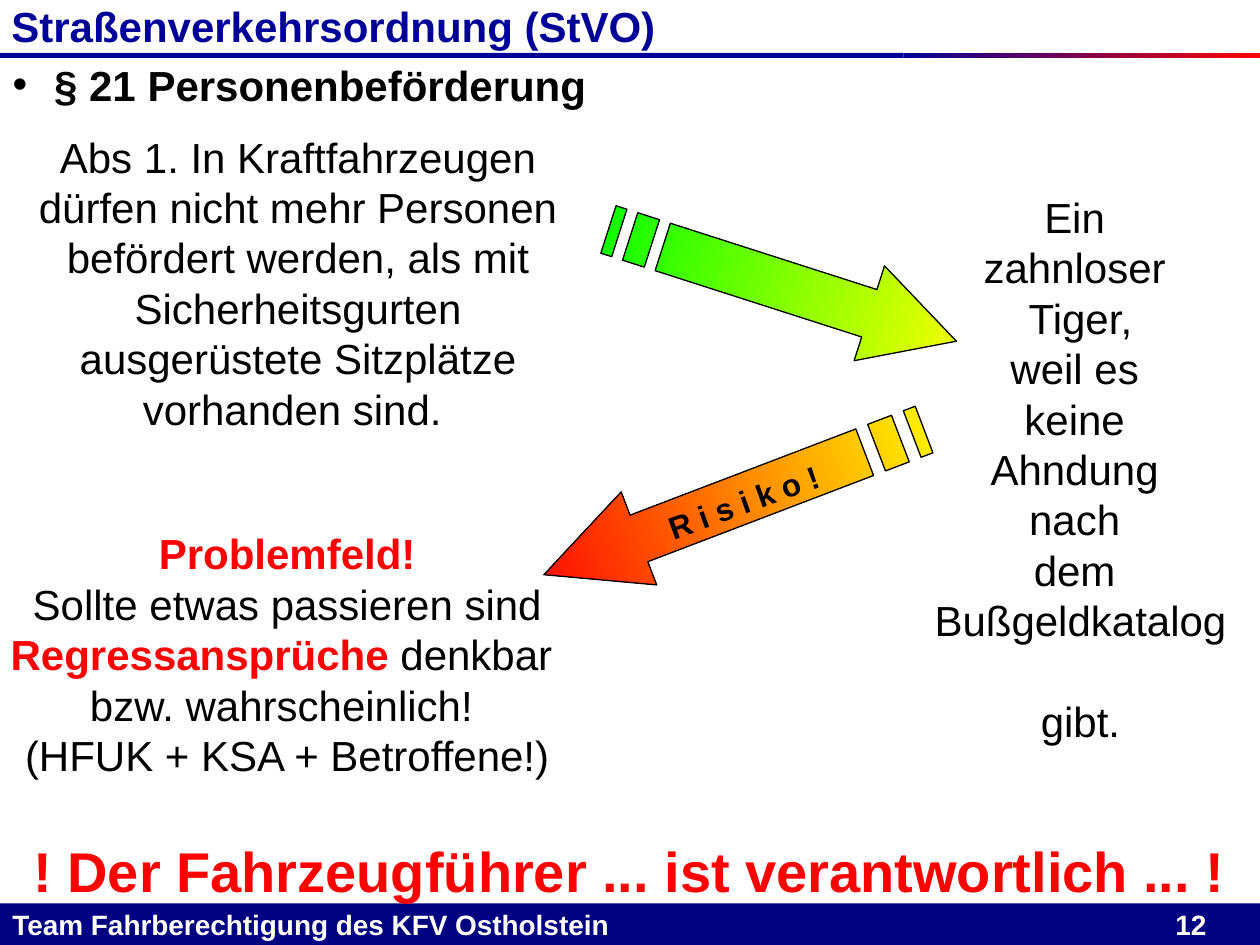
from copy import deepcopy
from typing import NamedTuple

from pptx import Presentation
from pptx.dml.color import RGBColor
from pptx.enum.shapes import MSO_SHAPE
from pptx.enum.text import MSO_ANCHOR, MSO_AUTO_SIZE, PP_ALIGN
from pptx.oxml.ns import qn
from pptx.util import Inches, Pt
from lxml.etree import SubElement

WIDE, HIGH = 10, 7.5
NAVY, DEEP, RED = "000099", "000080", "FF0000"
BLACK, WHITE = "000000", "FFFFFF"
LEFT, MID = PP_ALIGN.LEFT, PP_ALIGN.CENTER


class Box(NamedTuple):
    x: float
    y: float
    w: float
    h: float
    turn: float = 0


class Part(NamedTuple):
    text: str
    tint: str = BLACK
    bold: bool = False


class Arrow(NamedTuple):
    box: Box
    tints: tuple[str, str]


class Note(NamedTuple):
    box: Box
    rows: list[list[Part]]
    size: int = 24
    anchor: MSO_ANCHOR = MSO_ANCHOR.TOP
    wrap: bool = True


def paint(tint: str) -> RGBColor:
    return RGBColor.from_string(tint)


def place(shape, box: Box) -> None:
    shape.left, shape.top, shape.width, shape.height = map(Inches, box[:4])
    shape.rotation = box.turn


def write(frame, rows, *, size=24, align=MID, anchor=MSO_ANCHOR.TOP,
          wrap=True, inset=0.1, edge=0.05):
    """Fill a text frame: each row is a paragraph, each part a format."""
    frame.auto_size = MSO_AUTO_SIZE.NONE
    frame.word_wrap = wrap
    frame.vertical_anchor = anchor
    frame.margin_left = frame.margin_right = Inches(inset)
    frame.margin_top = frame.margin_bottom = Inches(edge)
    for i, row in enumerate(rows):
        para = frame.add_paragraph() if i else frame.paragraphs[0]
        para.alignment = align
        para.space_before = Pt(0)
        for part in row:
            for j, line in enumerate(part.text.split("\n")):
                if j:
                    para.add_line_break()
                    para._p[-1].append(deepcopy(run._r.rPr))
                run = para.add_run()
                run.text = line
                font = run.font
                font.name, font.size, font.bold = "Arial", Pt(size), part.bold
                font.color.rgb = paint(part.tint)


def blend(shape, tints: tuple[str, str]) -> None:
    shape.fill.gradient()
    shape.fill.gradient_angle = 0
    for stop, tint, spot in zip(shape.fill.gradient_stops, tints, (0, 1)):
        stop.color.rgb, stop.position = paint(tint), spot


def draw_bar(slide, box: Box, *tints: str):
    bar = slide.shapes.add_shape(MSO_SHAPE.RECTANGLE, *map(Inches, box[:4]))
    bar.shadow.inherit = False
    bar.line.fill.background()
    if len(tints) > 1:
        blend(bar, tints)
    else:
        bar.fill.solid()
        bar.fill.fore_color.rgb = paint(tints[0])
    return bar


def draw_arrow(slide, arrow: Arrow) -> None:
    # Striped arrow on a grid of 32 columns and 4 rows
    box = arrow.box
    pen = slide.shapes.build_freeform(
        5, 1, scale=(Inches(box.w) / 32, Inches(box.h) / 4))
    pen.add_line_segments([(24, 1), (24, 0), (32, 2), (24, 4), (24, 3), (5, 3)])
    for start, end in ((2, 4), (0, 1)):
        pen.move_to(start, 1)
        pen.add_line_segments([(end, 1), (end, 3), (start, 3)])
    shape = pen.convert_to_shape()
    place(shape, box)
    shape.shadow.inherit = False
    blend(shape, arrow.tints)
    shape.line.color.rgb, shape.line.width = paint(BLACK), Pt(0.75)


def draw_note(slide, note: Note) -> None:
    shape = slide.shapes.add_textbox(0, 0, 0, 0)
    place(shape, note.box)
    write(shape.text_frame, note.rows, size=note.size,
          anchor=note.anchor, wrap=note.wrap)


ARROWS = [
    Arrow(Box(4.76, 1.87, 2.9, 0.79, 17.8), ("00FF00", "FFFF00")),
    Arrow(Box(4.21, 3.59, 3.23, 0.79, 159.1), ("FFFF00", RED)),
]
NOTES = [
    Note(Box(0, 6.59, WIDE, 0.63),
         [[Part("! Der Fahrzeugführer ... ist verantwortlich ... !", RED, True)]],
         size=32),
    Note(Box(0.12, 0.99, 4.49, 2.5),
         [[Part("Abs 1. In Kraftfahrzeugen dürfen nicht mehr Personen befördert "
                "werden, als mit Sicherheitsgurten ausgerüstete Sitzplätze "
                "vorhanden sind. ")]], anchor=MSO_ANCHOR.MIDDLE),
    Note(Box(7.28, 1.47, 2.59, 4.09),
         [[Part("Ein \nzahnloser \nTiger,\nweil es \nkeine \nAhndung \nnach \ndem ")],
          [Part("Bußgeldkatalog \ngibt.")]]),
    Note(Box(-0.02, 4.14, 4.6, 2.1),
         [[Part("Problemfeld!", RED, True)],
          [Part("Sollte etwas passieren sind")],
          [Part("Regressansprüche", RED, True),
           Part(" denkbar \nbzw. wahrscheinlich! \n(HFUK + KSA + Betroffene!)")]],
         wrap=False),
    Note(Box(4.9, 3.78, 2, 0.4, 340.1),
         [[Part("R i s i k o !", BLACK, True)]], size=18),
]


def main() -> None:
    deck = Presentation()
    deck.slide_width, deck.slide_height = Inches(WIDE), Inches(HIGH)
    slide = deck.slides.add_slide(deck.slide_layouts[1])
    title, body = slide.placeholders

    # Rule below the title, and footer with page number at a tab stop
    split = 7.17
    draw_bar(slide, Box(0, 0.42, split, 0.04), NAVY)
    draw_bar(slide, Box(split, 0.42, WIDE - split, 0.04), NAVY, RED)
    foot = draw_bar(slide, Box(0, HIGH - 0.33, WIDE, 0.33), DEEP).text_frame
    tabs = SubElement(foot.paragraphs[0]._p.get_or_add_pPr(), qn("a:tabLst"))
    SubElement(tabs, qn("a:tab"), pos=str(Inches(9.23)), algn="l")
    write(foot, [[Part("Team Fahrberechtigung des KFV Ostholstein\t12", WHITE, True)]],
          size=16, align=LEFT, anchor=MSO_ANCHOR.MIDDLE)

    # Title and bullet
    place(title, Box(0, 0, WIDE, 0.4))
    write(title.text_frame, [[Part("Straßenverkehrsordnung (StVO)", NAVY, True)]],
          align=LEFT, anchor=MSO_ANCHOR.MIDDLE, inset=0.09, edge=0)
    place(body, Box(0, 0.5, WIDE, 0.42))
    item = body.text_frame.paragraphs[0]
    form = item._p.get_or_add_pPr()
    form.set("marL", str(Inches(0.33)))
    form.set("indent", str(-Inches(0.33)))
    SubElement(form, qn("a:buChar"), char="•")
    write(body.text_frame, [[Part("§ 21 Personenbeförderung", BLACK, True)]], align=LEFT)
    item.line_spacing = 0.8

    # Arrows and texts
    for arrow in ARROWS:
        draw_arrow(slide, arrow)
    for note in NOTES:
        draw_note(slide, note)
    deck.save("out.pptx")


if __name__ == "__main__":
    main()
